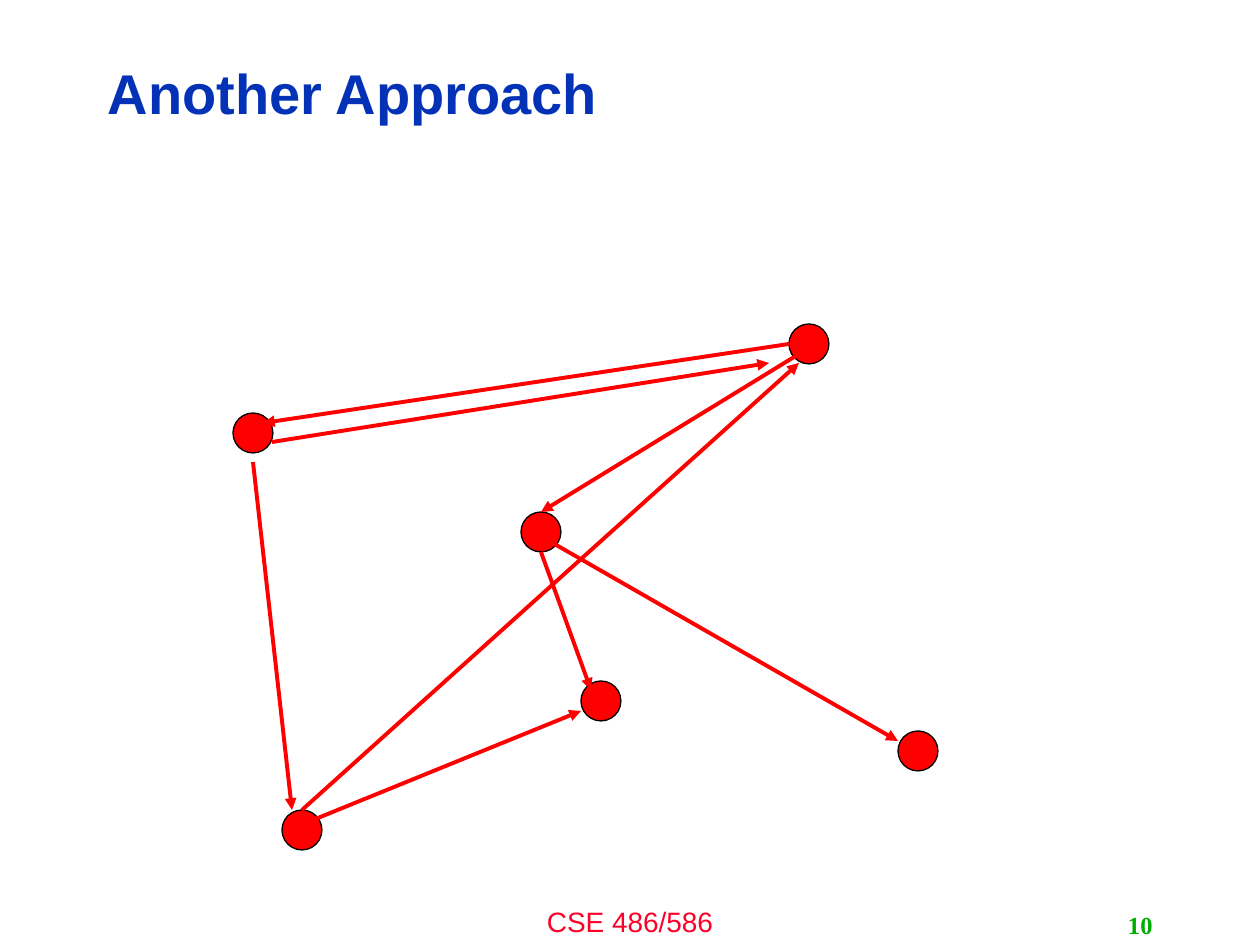
from typing import NamedTuple

from lxml.etree import SubElement
from pptx import Presentation
from pptx.dml.color import RGBColor
from pptx.enum.shapes import MSO_CONNECTOR, MSO_SHAPE
from pptx.enum.text import MSO_ANCHOR, MSO_AUTO_SIZE, PP_ALIGN
from pptx.oxml.ns import qn
from pptx.util import Emu, Pt

RED = RGBColor(0xFF, 0x00, 0x00)
BLACK = RGBColor(0x00, 0x00, 0x00)
BLUE = RGBColor(0x03, 0x32, 0xB7)
CRIMSON = RGBColor(0xFC, 0x01, 0x28)
GREEN = RGBColor(0x00, 0xAE, 0x00)

SCALE = 914400 / 126  # EMU in one px
SIZE = 40  # node diameter in px


class Node(NamedTuple):
    left: int
    top: int


class Arrow(NamedTuple):
    x1: int
    y1: int
    x2: int
    y2: int


NODES = [
    Node(233, 413),
    Node(581, 681),
    Node(282, 810),
    Node(898, 731),
    Node(521, 512),
    Node(789, 324),
]

ARROWS = [
    Arrow(313, 820, 581, 711),
    Arrow(302, 810, 799, 363),
    Arrow(541, 552, 591, 690),
    Arrow(551, 542, 898, 741),
    Arrow(789, 344, 263, 423),
    Arrow(253, 462, 292, 810),
    Arrow(272, 442, 769, 363),
    Arrow(799, 354, 541, 512),
]


def px(n: int) -> Emu:
    return Emu(round(n * SCALE))


def write(shape, text: str, *, box: tuple[int, int, int, int], size: int,
          color: RGBColor, font: str = "Arial", bold: bool = False,
          align=PP_ALIGN.LEFT, anchor=MSO_ANCHOR.MIDDLE,
          spacing: float = 1.0) -> None:
    shape.left, shape.top, shape.width, shape.height = map(px, box)
    frame = shape.text_frame
    frame.word_wrap = True
    frame.auto_size = MSO_AUTO_SIZE.NONE
    frame.vertical_anchor = anchor
    para = frame.paragraphs[0]
    para.alignment = align
    para.line_spacing = spacing
    run = para.add_run()
    run.text = text
    run.font.name = font
    run.font.size = Pt(size)
    run.font.bold = bold
    run.font.color.rgb = color


def draw_node(slide, node: Node) -> None:
    dot = slide.shapes.add_shape(
        MSO_SHAPE.OVAL, px(node.left), px(node.top), px(SIZE), px(SIZE))
    dot.shadow.inherit = False
    dot.fill.solid()
    dot.fill.fore_color.rgb = RED
    dot.line.color.rgb = BLACK
    dot.line.width = Pt(0.75)


def draw_arrow(slide, arrow: Arrow) -> None:
    link = slide.shapes.add_connector(MSO_CONNECTOR.STRAIGHT, *map(px, arrow))
    link.line.color.rgb = RED
    link.line.width = Pt(2.25)
    SubElement(link.line._get_or_add_ln(), qn("a:tailEnd"), type="triangle")
    SubElement(link._element.spPr, qn("a:effectLst"))


def main() -> None:
    deck = Presentation()
    deck.slide_width, deck.slide_height = px(1260), px(945)
    slide = deck.slides.add_slide(deck.slide_layouts[5])

    # Footer, title and page number
    write(slide.shapes.add_textbox(0, 0, 0, 0), "CSE 486/586",
          box=(420, 898, 420, 47), size=16, color=CRIMSON,
          align=PP_ALIGN.CENTER)
    write(slide.shapes.title, "Another Approach", box=(95, 45, 1005, 102),
          size=32, color=BLUE, bold=True, spacing=0.9)
    write(slide.shapes.add_textbox(0, 0, 0, 0), "10",
          box=(903, 905, 262, 40), size=14, color=GREEN,
          font="Times New Roman", bold=True, align=PP_ALIGN.RIGHT)

    # Graph
    for node in NODES:
        draw_node(slide, node)
    for arrow in ARROWS:
        draw_arrow(slide, arrow)

    deck.save("out.pptx")


if __name__ == "__main__":
    main()
